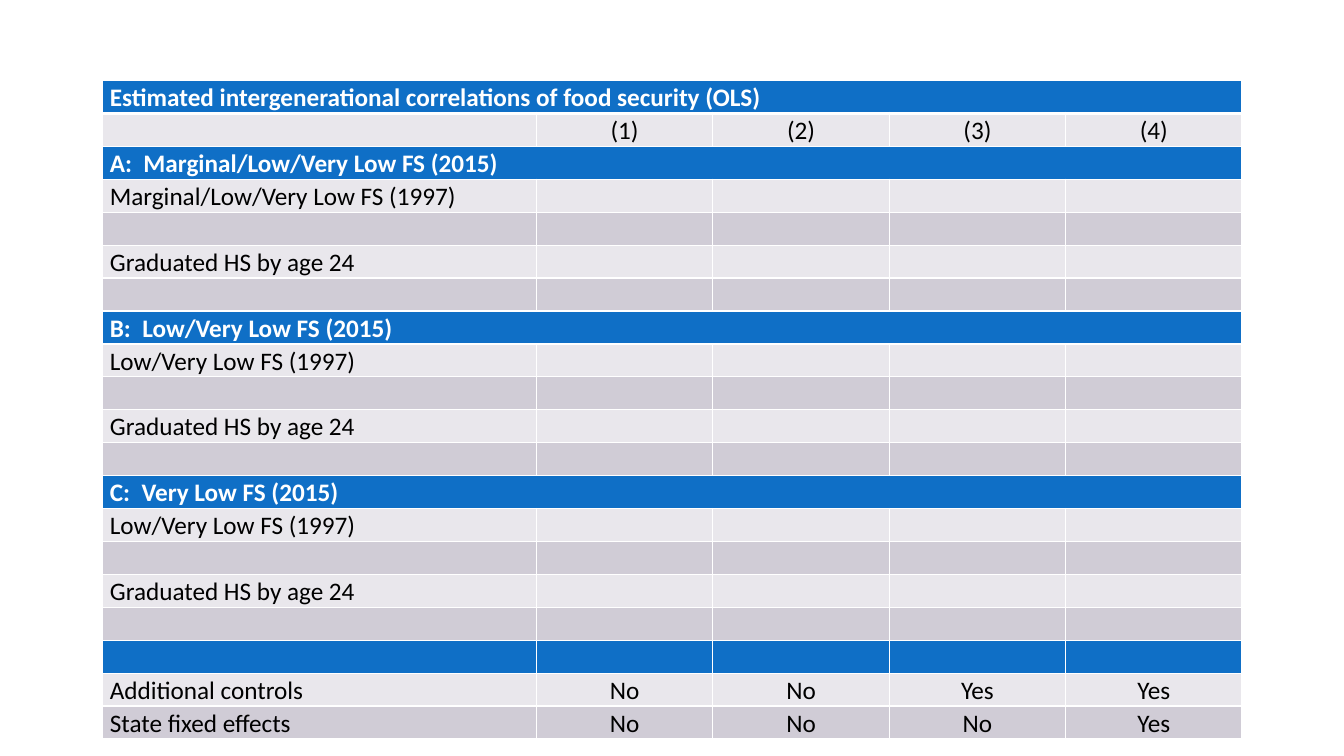
from dataclasses import dataclass

import lxml.etree
import pptx
import pptx.dml.color
import pptx.enum.text
import pptx.oxml.ns
import pptx.util

Pt = pptx.util.Pt
ALIGN = pptx.enum.text.PP_ALIGN
BLUE, LIGHT, DARK = "0F6FC6", "E9E7EC", "D0CCD6"
WHITE, BLACK = "FFFFFF", "000000"
COL_WIDTHS = [309.7, 126, 126, 126, 126]
ROW_HEIGHT = 23.5
LEFT, TOP = 73.5, 57.5


@dataclass
class Row:
    texts: tuple[str, ...] = ()
    fill: str = LIGHT
    heading: bool = False


def color(value: str) -> pptx.dml.color.RGBColor:
    return pptx.dml.color.RGBColor.from_string(value)


def write(tf, text: str, *, size: float = 18, fill: str = BLACK,
          bold: bool = False, align=ALIGN.LEFT) -> None:
    p = tf.paragraphs[0]
    p.alignment = align
    p.line_spacing = 1.07
    r = p.add_run()
    r.text = text
    r.font.name, r.font.size, r.font.bold = "Calibri", Pt(size), bold
    r.font.color.rgb = color(fill)


def border(cell, side: str, width: float) -> None:
    qn = pptx.oxml.ns.qn
    ln = lxml.etree.SubElement(cell._tc.get_or_add_tcPr(), qn(f"a:ln{side}"), w=str(Pt(width)))
    solid = lxml.etree.SubElement(ln, qn("a:solidFill"))
    lxml.etree.SubElement(solid, qn("a:srgbClr"), val=WHITE)


def panel(title: str, predictor: str) -> list[Row]:
    return [Row((title,), BLUE, True),
            Row((predictor,)), Row(fill=DARK),
            Row(("Graduated HS by age 24",)), Row(fill=DARK)]


def draw_row(table, i: int, row: Row) -> None:
    table.rows[i].height = Pt(ROW_HEIGHT)
    for j in range(len(COL_WIDTHS)):
        cell = table.cell(i, j)
        cell.margin_left = cell.margin_right = Pt(5)
        cell.margin_top = cell.margin_bottom = 0
        cell.vertical_anchor = pptx.enum.text.MSO_ANCHOR.MIDDLE
        # The rule under the table title is thicker
        widths = {"L": 1, "R": 1, "T": 3 if i == 1 else 1, "B": 3 if i == 0 else 1}
        for side, width in widths.items():
            border(cell, side, width)
        cell.fill.solid()
        cell.fill.fore_color.rgb = color(row.fill)
        if j < len(row.texts) and row.texts[j]:
            write(cell.text_frame, row.texts[j], bold=row.heading,
                  fill=WHITE if row.heading else BLACK,
                  align=ALIGN.CENTER if j else ALIGN.LEFT)
    if row.heading:
        table.cell(i, 0).merge(table.cell(i, len(COL_WIDTHS) - 1))


def main() -> None:
    prs = pptx.Presentation()
    prs.slide_width, prs.slide_height = Pt(960), Pt(540)
    s = prs.slides.add_slide(prs.slide_layouts[6])

    # Table contents
    rows = [
        Row(("Estimated intergenerational correlations of food security (OLS)",), BLUE, True),
        Row(("", "(1)", "(2)", "(3)", "(4)")),
        *panel("A:  Marginal/Low/Very Low FS (2015)", "Marginal/Low/Very Low FS (1997)"),
        *panel("B:  Low/Very Low FS (2015)", "Low/Very Low FS (1997)"),
        *panel("C:  Very Low FS (2015)", "Low/Very Low FS (1997)"),
        Row(fill=BLUE),
        Row(("Additional controls", "No", "No", "Yes", "Yes")),
        Row(("State fixed effects", "No", "No", "No", "Yes"), DARK),
    ]

    # Table
    table = s.shapes.add_table(len(rows), len(COL_WIDTHS), Pt(LEFT), Pt(TOP),
                               Pt(sum(COL_WIDTHS)), Pt(ROW_HEIGHT * len(rows))).table
    table.first_row = table.horz_banding = False
    for column, width in zip(table.columns, COL_WIDTHS):
        column.width = Pt(width)
    for i, row in enumerate(rows):
        draw_row(table, i, row)

    prs.save("out.pptx")


if __name__ == "__main__":
    main()
